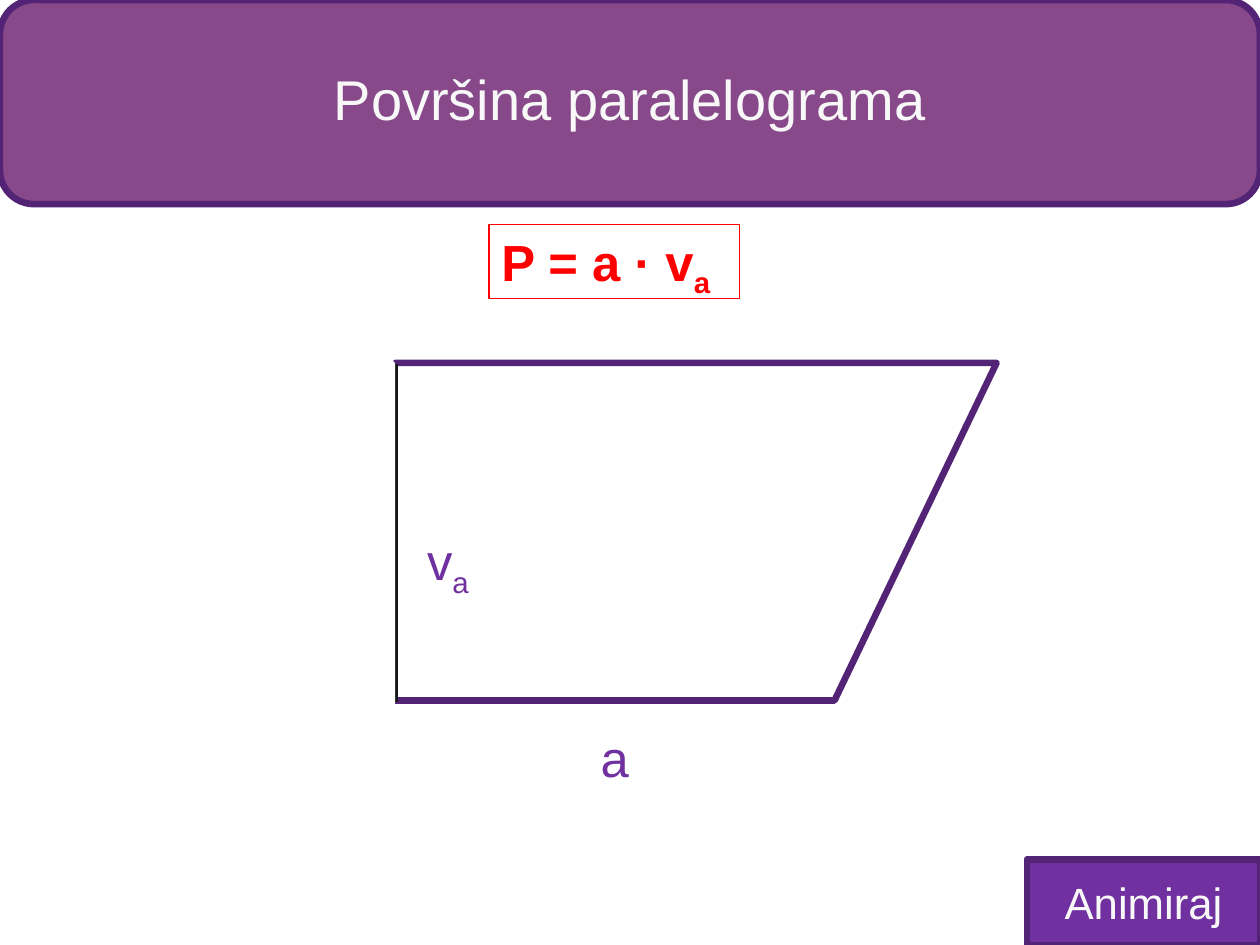
from dataclasses import dataclass

from lxml.etree import SubElement
from pptx import Presentation
from pptx.dml.color import RGBColor as Color
from pptx.enum.shapes import MSO_CONNECTOR as Connector, MSO_SHAPE as Shape
from pptx.enum.text import MSO_ANCHOR as Anchor, MSO_AUTO_SIZE as AutoSize, PP_ALIGN as Align
from pptx.oxml import parse_xml
from pptx.oxml.ns import nsdecls, qn
from pptx.util import Inches, Pt


@dataclass(frozen=True)
class Theme:
    font: str = "Arial"
    banner: str = "874989"
    border: str = "532476"
    accent: str = "7030A0"
    formula: str = "FF0000"
    height: str = "181818"
    light: str = "F8F8F8"
    white: str = "FFFFFF"
    title_size: float = 32
    math_size: float = 29
    button_size: float = 25
    thick: float = 3.78
    medium: float = 3
    thin: float = 0.75
    text_outline: float = 0.83


class SlideBuilder:
    def __init__(self, page, theme):
        self.page = page
        self.theme = theme

    def shape(self, kind, bounds, line, fill=None, width=None, flip=False):
        shape = self.page.shapes.add_shape(kind, *map(Inches, bounds))
        shape.shadow.inherit = False
        if fill:
            shape.fill.solid()
            shape.fill.fore_color.rgb = Color.from_string(fill)
        else:
            shape.fill.background()
        shape.line.color.rgb = Color.from_string(line)
        shape.line.width = Pt(width or self.theme.thick)
        if flip:
            shape.element.spPr.find(qn("a:xfrm")).set("flipH", "1")
        return shape

    def span(self, para, text, size, color, bold=False, subscript=False):
        span = para.add_run()
        span.text = text
        span.font.name = self.theme.font
        span.font.size = Pt(size)
        span.font.bold = bold
        span.font.color.rgb = Color.from_string(color)
        if subscript:
            span.font._element.set("baseline", "-25000")
        return span

    def centered(self, box, text, size):
        frame = box.text_frame
        frame.word_wrap = True
        frame.vertical_anchor = Anchor.MIDDLE
        para = frame.paragraphs[0]
        para.alignment = Align.CENTER
        self.span(para, text, size, self.theme.light)

    def title(self, text, bounds, banner_bounds):
        title = self.page.shapes.title
        title.left, title.top, title.width, title.height = map(Inches, bounds)
        banner = self.shape(Shape.ROUNDED_RECTANGLE, banner_bounds,
                            self.theme.border, self.theme.banner)
        title.element.addprevious(banner.element)
        self.centered(title, text, self.theme.title_size)

    def label(self, text, bounds, subscript=None):
        box = self.page.shapes.add_textbox(*map(Inches, bounds))
        box.text_frame.word_wrap = True
        para = box.text_frame.paragraphs[0]
        para.alignment = Align.CENTER
        para.line_spacing = 1.5
        properties = para._p.get_or_add_pPr()
        properties.set("marL", str(Inches(0.05)))
        properties.set("indent", str(Inches(-0.05)))
        spans = [self.span(para, text, self.theme.math_size, self.theme.accent)]
        if subscript:
            spans.append(self.span(para, subscript, self.theme.math_size,
                                   self.theme.accent, subscript=True))
        for span in spans:
            self.outline(span)

    def outline(self, span):
        line = parse_xml(f'<a:ln {nsdecls("a")} w="{Pt(self.theme.text_outline)}"/>')
        fill = SubElement(line, qn("a:solidFill"))
        SubElement(fill, qn("a:srgbClr")).set("val", self.theme.banner)
        span.font._element.insert(0, line)

    def formula(self, text, subscript, bounds):
        box = self.shape(Shape.RECTANGLE, bounds, self.theme.formula, width=self.theme.thin)
        frame = box.text_frame
        frame.word_wrap = True
        frame.auto_size = AutoSize.SHAPE_TO_FIT_TEXT
        frame.vertical_anchor = Anchor.TOP
        para = frame.paragraphs[0]
        para.alignment = Align.LEFT
        style = (self.theme.math_size, self.theme.formula, True)
        self.span(para, text, *style)
        self.span(para, subscript, *style, subscript=True)

    def line(self, start, end):
        line = self.page.shapes.add_connector(
            Connector.STRAIGHT, *map(Inches, (*start, *end)))
        line.line.color.rgb = Color.from_string(self.theme.height)
        line.line.width = Pt(self.theme.medium)
        SubElement(line._element.spPr, qn("a:effectLst"))

    def button(self, text, bounds):
        button = self.shape(Shape.ACTION_BUTTON_CUSTOM, bounds,
                            self.theme.border, self.theme.accent)
        self.centered(button, text, self.theme.button_size)


def main():
    deck = Presentation()
    deck.slide_width, deck.slide_height = Inches(10), Inches(7.5)
    theme = Theme()
    builder = SlideBuilder(deck.slides.add_slide(deck.slide_layouts[5]), theme)

    builder.title("Površina paralelograma", (0, 0, 10, 1.55), (0, 0, 10, 1.62))
    parallelogram = builder.shape(Shape.PARALLELOGRAM, (1.85, 2.88, 6.06, 2.68), theme.border)
    parallelogram.adjustments[0] = 0.48
    builder.label("a", (4.65, 5.48, 0.46, 0.7))
    builder.label("v", (3.12, 3.88, 0.87, 0.7), subscript="a")
    builder.line((3.14, 2.89), (3.14, 5.57))
    builder.button("Animiraj", (8.15, 6.82, 1.85, 0.68))
    builder.shape(Shape.RIGHT_TRIANGLE, (1.53, 2.89, 1.58, 2.69),
                  theme.white, theme.white, flip=True)
    builder.formula("P = a · v", "a", (3.88, 1.78, 1.99, 0.59))
    deck.save("out.pptx")


if __name__ == "__main__":
    main()
